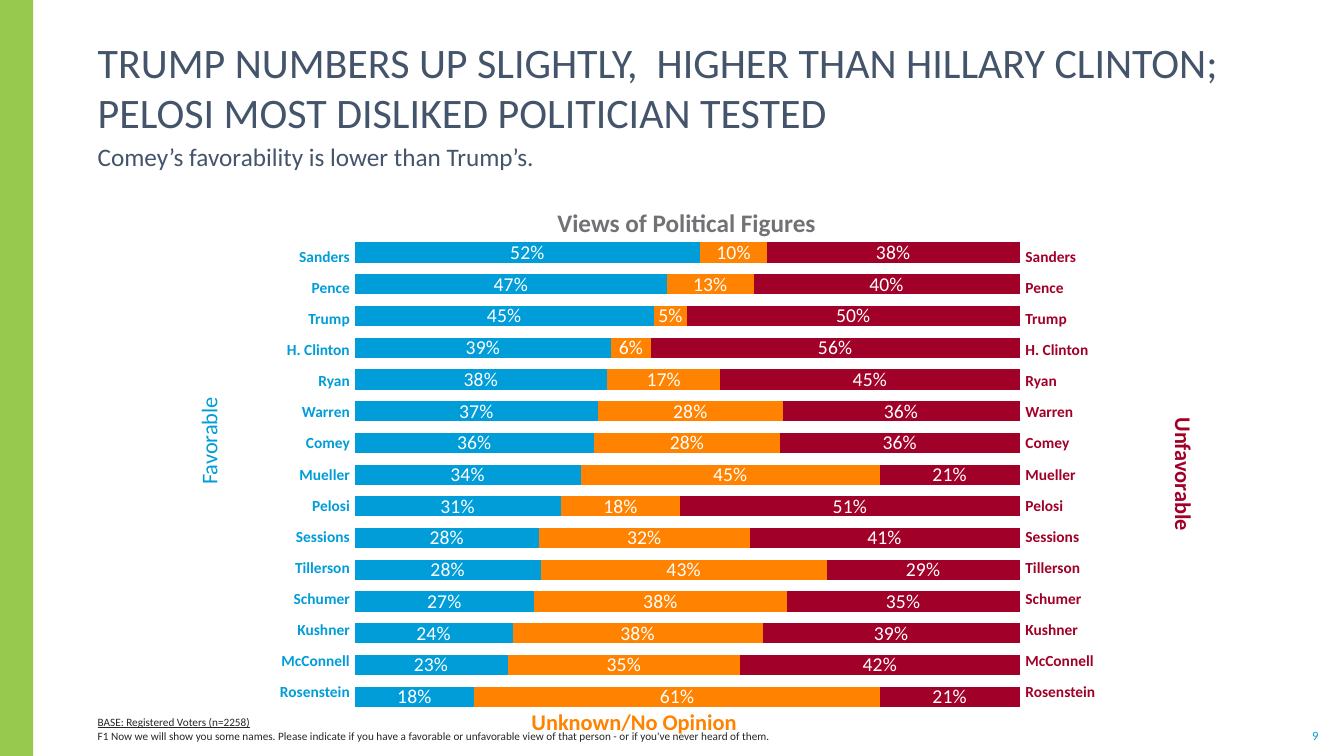
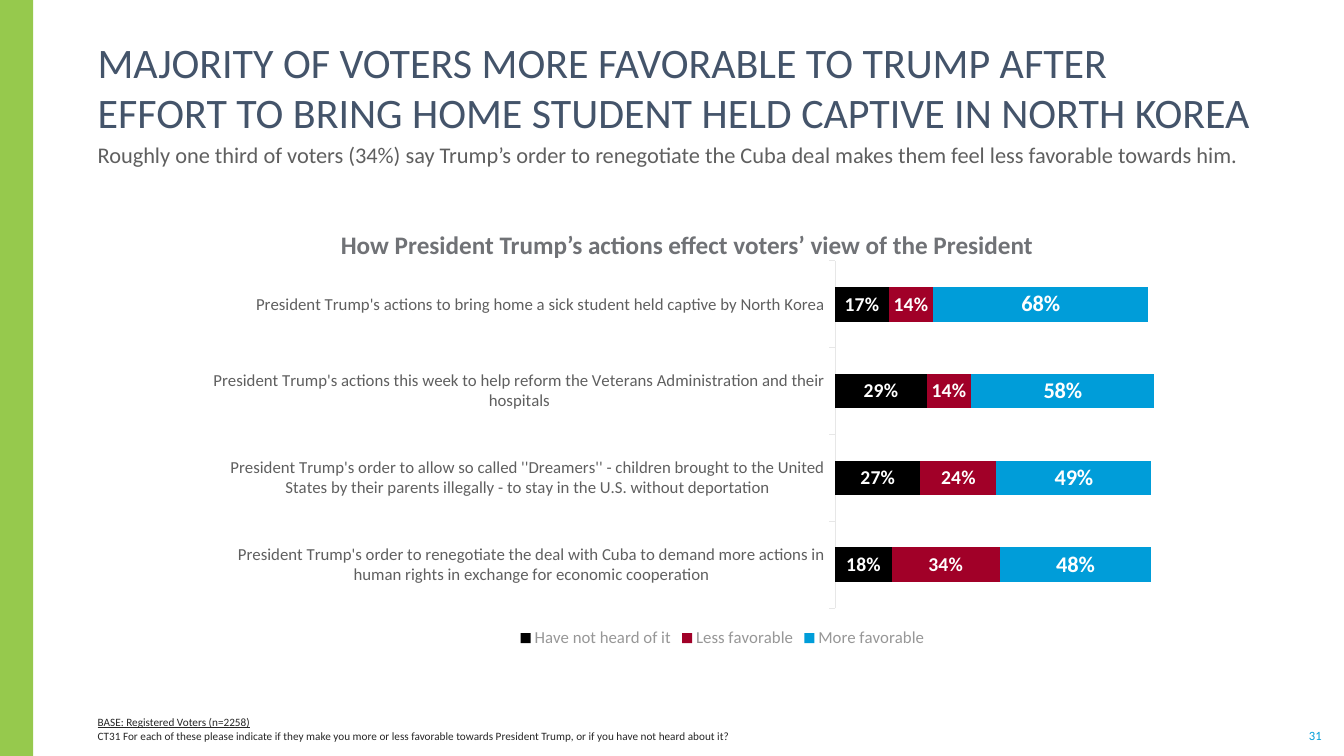
from dataclasses import dataclass

from pptx import Presentation
from pptx.chart.data import CategoryChartData
from pptx.dml.color import RGBColor
from pptx.enum import chart as ch, shapes, text
from pptx.util import Inches, Pt


@dataclass(frozen=True)
class Theme:
    font: str = "Calibri"
    band: str = "96C94D"
    title: str = "44546A"
    body: str = "5F5F5F"
    heading: str = "707276"
    note: str = "262626"
    legend: str = "979797"
    axis: str = "E7E7E7"
    white: str = "FFFFFF"
    black: str = "000000"
    blue: str = "009DD9"
    orange: str = "FF8300"
    red: str = "A10028"
    title_size: int = 30
    heading_size: int = 18
    axis_title_size: int = 16
    label_size: int = 14
    category_size: int = 12
    name_size: int = 11
    chart_size: int = 10
    number_size: int = 9
    note_size: int = 8


THEME = Theme()
LEFT, CENTER, RIGHT = text.PP_ALIGN.LEFT, text.PP_ALIGN.CENTER, text.PP_ALIGN.RIGHT
TOP, MIDDLE, BOTTOM = text.MSO_ANCHOR.TOP, text.MSO_ANCHOR.MIDDLE, text.MSO_ANCHOR.BOTTOM
BASE = "BASE: Registered Voters (n=2258)"

FIGURES_SLIDE = {
    "title": "TRUMP NUMBERS UP SLIGHTLY,  HIGHER THAN HILLARY CLINTON; "
             "PELOSI MOST DISLIKED POLITICIAN TESTED",
    "title_width": 11.38,
    "subtitle": ("Comey’s favorability is lower than Trump’s.", 18, THEME.title),
    "question": "F1 Now we will show you some names. Please indicate if you have a favorable or "
                "unfavorable view of that person - or if you've never heard of them.",
    "number": 9,
}
# Name, favorable, unknown or no opinion, unfavorable
FIGURES = [
    ("Sanders", 0.52, 0.10, 0.38),
    ("Pence", 0.47, 0.13, 0.40),
    ("Trump", 0.45, 0.05, 0.50),
    ("H. Clinton", 0.39, 0.06, 0.56),
    ("Ryan", 0.38, 0.17, 0.45),
    ("Warren", 0.37, 0.28, 0.36),
    ("Comey", 0.36, 0.28, 0.36),
    ("Mueller", 0.34, 0.45, 0.21),
    ("Pelosi", 0.31, 0.18, 0.51),
    ("Sessions", 0.28, 0.32, 0.41),
    ("Tillerson", 0.28, 0.43, 0.29),
    ("Schumer", 0.27, 0.38, 0.35),
    ("Kushner", 0.24, 0.38, 0.39),
    ("McConnell", 0.23, 0.35, 0.42),
    ("Rosenstein", 0.18, 0.61, 0.21),
]
# Series name, colour, label size, bold label
FIGURE_SERIES = [
    ("Favorable", THEME.blue, THEME.label_size, False),
    ("Unknown/No Opinion", THEME.orange, THEME.label_size, False),
    ("Unfavorable", THEME.red, THEME.label_size, False),
]
# Box, rotation, bold
FIGURE_SERIES_TITLES = [
    ((0.95, 4.08, 2.02, 0.59), 270, False),
    ((4.83, 6.76, 2.92, 0.59), 0, True),
    ((10.84, 4.41, 2.02, 0.59), 90, True),
]
# Left edge, colour, alignment
NAME_COLUMNS = [(2.67, THEME.blue, RIGHT), (10.16, THEME.red, LEFT)]

ACTIONS_SLIDE = {
    "title": "MAJORITY OF VOTERS MORE FAVORABLE TO TRUMP AFTER\v"
             "EFFORT TO BRING HOME STUDENT HELD CAPTIVE IN NORTH KOREA",
    "title_width": 12.3,
    "subtitle": ("Roughly one third of voters (34%) say Trump’s order to renegotiate the Cuba deal "
                 "makes them feel less favorable towards him.", 16, THEME.body),
    "question": "CT31 For each of these please indicate if they make you more or less favorable "
                "towards President Trump, or if you have not heard about it?",
    "number": 31,
}
# Action, have not heard of it, less favorable, more favorable
ACTIONS = [
    ("President Trump's actions to bring home a sick student held captive by North Korea",
     0.17, 0.14, 0.68),
    ("President Trump's actions this week to help reform the Veterans Administration and their "
     "hospitals", 0.29, 0.14, 0.58),
    ("President Trump's order to allow so called ''Dreamers'' - children brought to the United "
     "States by their parents illegally - to stay in the U.S. without deportation",
     0.27, 0.24, 0.49),
    ("President Trump's order to renegotiate the deal with Cuba to demand more actions in human "
     "rights in exchange for economic cooperation", 0.18, 0.34, 0.48),
]
ACTION_SERIES = [
    ("Have not heard of it", THEME.black, THEME.label_size, True),
    ("Less favorable", THEME.red, THEME.label_size, True),
    ("More favorable", THEME.blue, 16, True),
]


def rgb(color):
    return RGBColor.from_string(color)


def set_font(font, size, color, bold=False):
    font.name, font.size, font.bold = THEME.font, Pt(size), bold
    font.color.rgb = rgb(color)


def add_text(slide, box, lines, size, color, bold=False, align=LEFT, anchor=TOP,
             insets=(0.1, 0), wrap=True):
    """Add a text box with one paragraph per line; insets are (sides, top and bottom)."""
    shape = slide.shapes.add_textbox(*map(Inches, box))
    frame = shape.text_frame
    frame.word_wrap, frame.vertical_anchor = wrap, anchor
    frame.margin_left = frame.margin_right = Inches(insets[0])
    frame.margin_top = frame.margin_bottom = Inches(insets[1])
    frame.text = "\n".join(lines)
    for paragraph in frame.paragraphs:
        paragraph.alignment = align
        set_font(paragraph.font, size, color, bold)
    return shape


def add_base_slide(presentation, content):
    """Add a slide with the band, number, title, subtitle and footnote all slides share."""
    slide = presentation.slides.add_slide(presentation.slide_layouts[6])
    band = slide.shapes.add_shape(shapes.MSO_SHAPE.RECTANGLE, 0, 0, Inches(0.33),
                                  presentation.slide_height)
    band.shadow.inherit = False
    band.fill.solid()
    band.fill.fore_color.rgb = rgb(THEME.band)
    band.line.fill.background()

    add_text(slide, (12.97, 7.22, 0.15, 0.15), [str(content["number"])], THEME.number_size,
             THEME.blue, align=CENTER, anchor=MIDDLE, insets=(0, 0), wrap=False)
    add_text(slide, (0.87, 0.34, content["title_width"], 1.02), [content["title"]],
             THEME.title_size, THEME.title, anchor=BOTTOM)
    subtitle, size, color = content["subtitle"]
    add_text(slide, (0.87, 1.4, 11.9, 0.34), [subtitle], size, color)
    footnote = add_text(slide, (0.87, 6.97, 11.91, 0.4), [BASE, content["question"]],
                        THEME.note_size, THEME.note, anchor=BOTTOM)
    base, question = footnote.text_frame.paragraphs
    base.font.underline = True
    question.space_before = Pt(0.6)
    return slide


def add_heading(slide, box, heading):
    add_text(slide, box, [heading], THEME.heading_size, THEME.heading, bold=True,
             align=CENTER, insets=(0.1, 0.05))


def set_plot_layout(chart, fractions):
    """Fix the inner plot area at (x, y, w, h) as fractions of the chart."""
    plot_area = chart._chartSpace.chart.plotArea
    layout = plot_area.find("{*}layout")
    if layout is None:
        layout = plot_area.makeelement(plot_area.tag.replace("plotArea", "layout"))
        plot_area.insert(0, layout)

    def add(parent, tag, value=None):
        child = parent.makeelement(plot_area.tag.replace("plotArea", tag))
        if value is not None:
            child.set("val", str(value))
        parent.append(child)
        return child

    manual = add(layout, "manualLayout")
    add(manual, "layoutTarget", "inner")
    for mode in ("xMode", "yMode"):
        add(manual, mode, "edge")
    for tag, fraction in zip("xywh", fractions):
        add(manual, tag, fraction)


def add_stacked_bars(slide, kind, box, rows, series_styles, gap, maximum, plot_layout):
    """Add a stacked bar chart with the first row on top."""
    names, *columns = zip(*reversed(rows))
    data = CategoryChartData(number_format="0%")
    data.categories = names
    for (name, *_), values in zip(series_styles, columns):
        data.add_series(name, values)
    chart = slide.shapes.add_chart(kind, *map(Inches, box), data).chart
    set_font(chart.font, THEME.chart_size, THEME.body)
    chart.has_title = chart.has_legend = False
    chart.value_axis.visible = False
    chart.value_axis.has_major_gridlines = False
    chart.value_axis.minimum_scale, chart.value_axis.maximum_scale = 0, maximum

    plot = chart.plots[0]
    plot.gap_width, plot.overlap, plot.vary_by_categories = gap, 100, False
    for series, (_, color, size, bold) in zip(plot.series, series_styles):
        series.format.fill.solid()
        series.format.fill.fore_color.rgb = rgb(color)
        labels = series.data_labels
        labels.show_value = True
        labels.number_format, labels.number_format_is_linked = "0%", False
        labels.position = ch.XL_LABEL_POSITION.CENTER
        set_font(labels.font, size, THEME.white, bold)
    set_plot_layout(chart, plot_layout)
    return chart


def add_name_column(slide, left, color, align):
    table = slide.shapes.add_table(len(FIGURES), 1, Inches(left), Inches(2.39),
                                   Inches(0.81), Inches(4.63)).table
    table.first_row = table.horz_banding = False
    for cell, (name, *_) in zip(table.iter_cells(), FIGURES):
        cell.fill.background()
        cell.vertical_anchor = MIDDLE
        cell.margin_left = cell.margin_right = cell.margin_top = Inches(0.01)
        cell.margin_bottom = 0
        cell.text = name
        paragraph = cell.text_frame.paragraphs[0]
        paragraph.alignment = align
        set_font(paragraph.font, THEME.name_size, color, bold=True)


def build_figures_slide(presentation):
    slide = add_base_slide(presentation, FIGURES_SLIDE)
    chart = add_stacked_bars(slide, ch.XL_CHART_TYPE.BAR_STACKED_100, (3.38, 2.25, 6.87, 4.92),
                             FIGURES, FIGURE_SERIES, 57, 1, (0.02, 0.02, 0.96, 0.96))
    chart.category_axis.visible = False
    for (name, color, *_), (box, rotation, bold) in zip(FIGURE_SERIES, FIGURE_SERIES_TITLES):
        label = add_text(slide, box, [name], THEME.axis_title_size, color, bold, CENTER,
                         insets=(0.1, 0.05))
        label.rotation = rotation
        label.text_frame.paragraphs[0].line_spacing = Pt(35)
    add_heading(slide, (3.53, 2.01, 6.56, 0.4), "Views of Political Figures")
    for column in NAME_COLUMNS:
        add_name_column(slide, *column)


def build_actions_slide(presentation):
    slide = add_base_slide(presentation, ACTIONS_SLIDE)
    chart = add_stacked_bars(slide, ch.XL_CHART_TYPE.BAR_STACKED, (2.08, 2.51, 10.17, 3.96),
                             ACTIONS, ACTION_SERIES, 150, 1.2, (0.61, 0.02, 0.37, 0.87))
    axis = chart.category_axis
    axis.major_tick_mark = ch.XL_TICK_MARK.OUTSIDE
    axis.format.line.color.rgb = rgb(THEME.axis)
    axis.format.line.width = Pt(0.75)
    set_font(axis.tick_labels.font, THEME.category_size, THEME.body)
    chart.has_legend = True
    chart.legend.position = ch.XL_LEGEND_POSITION.BOTTOM
    chart.legend.include_in_layout = False
    set_font(chart.legend.font, THEME.category_size, THEME.legend)
    add_heading(slide, (1.63, 2.23, 10.37, 0.4),
                "How President Trump’s actions effect voters’ view of the President")


def main():
    presentation = Presentation()
    presentation.slide_width, presentation.slide_height = Inches(13.33), Inches(7.5)
    build_figures_slide(presentation)
    build_actions_slide(presentation)
    presentation.save("out.pptx")


if __name__ == "__main__":
    main()
